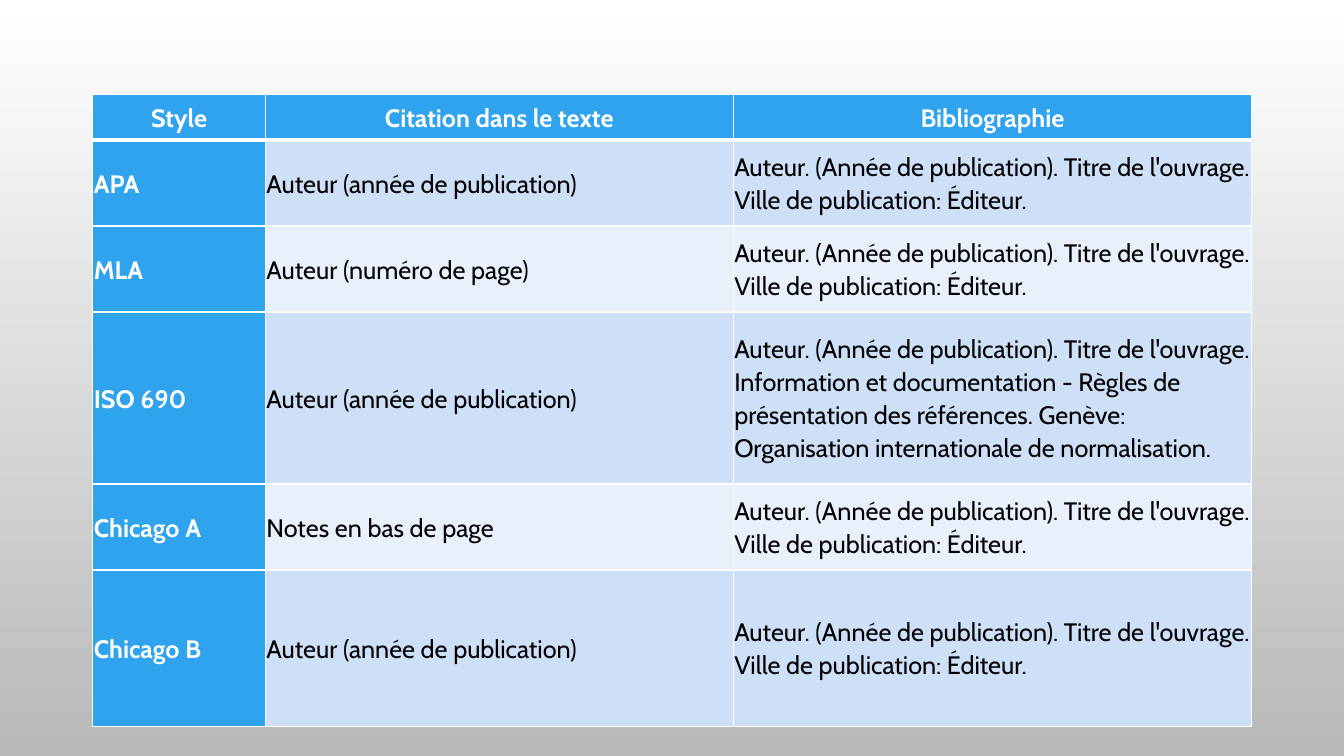
from dataclasses import dataclass

from pptx import Presentation
from pptx.dml.color import RGBColor
from pptx.enum.text import MSO_ANCHOR, PP_ALIGN
from pptx.oxml import parse_xml
from pptx.oxml.ns import nsdecls
from pptx.slide import Slide
from pptx.table import Table, _Cell as Cell
from pptx.util import Pt

COLORS = {
    "white": "FFFFFF",
    "black": "000000",
    "background_end": "B9B9B9",
    "heading": "2FA3EE",
    "odd_band": "CDE0F8",
    "even_band": "E8F0FC",
}
FONT = "Cabin"
COLUMN_WIDTHS = (123.3, 334.2, 370.3)
HEADER_HEIGHT = 32.4
HEADER_RULE = 3
GRID_RULE = 1
CELL_INSET = 0.75

HEADERS = ("Style", "Citation dans le texte", "Bibliographie")
AUTHOR_YEAR = "Auteur (année de publication)"
WORK = "Auteur. (Année de publication). Titre de l'ouvrage. "
BOOK = WORK + "Ville de publication: Éditeur."
STANDARD = WORK + (
    "Information et documentation - Règles de présentation des références. "
    "Genève: Organisation internationale de normalisation."
)


@dataclass(frozen=True)
class CitationStyle:
    name: str
    citation: str
    bibliography: str
    height: float


CITATION_STYLES = (
    CitationStyle("APA", AUTHOR_YEAR, BOOK, 61.4),
    CitationStyle("MLA", "Auteur (numéro de page)", BOOK, 61.4),
    CitationStyle("ISO 690", AUTHOR_YEAR, STANDARD, 122.8),
    CitationStyle("Chicago A", "Notes en bas de page", BOOK, 61.4),
    CitationStyle("Chicago B", AUTHOR_YEAR, BOOK, 112.1),
)


def color(name: str) -> RGBColor:
    return RGBColor.from_string(COLORS[name])


def set_borders(cell: Cell, top: float, bottom: float) -> None:
    """Draw white rules; they must precede the fill in the cell properties."""
    properties = cell._tc.get_or_add_tcPr()
    rules = (("L", GRID_RULE), ("R", GRID_RULE), ("T", top), ("B", bottom))
    for index, (side, width) in enumerate(rules):
        properties.insert(index, parse_xml(
            f'<a:ln{side} {nsdecls("a")} w="{Pt(width)}"><a:solidFill>'
            f'<a:srgbClr val="{COLORS["white"]}"/></a:solidFill></a:ln{side}>'
        ))


def fill_cell(cell: Cell, text: str, row: int, column: int) -> None:
    is_header = row == 0
    is_heading = is_header or column == 0
    band = "odd_band" if row % 2 else "even_band"

    cell.fill.solid()
    cell.fill.fore_color.rgb = color("heading" if is_heading else band)
    cell.vertical_anchor = MSO_ANCHOR.MIDDLE
    cell.margin_left = cell.margin_right = Pt(CELL_INSET)
    cell.margin_top = cell.margin_bottom = Pt(CELL_INSET)
    set_borders(
        cell,
        top=HEADER_RULE if row == 1 else GRID_RULE,
        bottom=HEADER_RULE if is_header else GRID_RULE,
    )

    cell.text = text
    paragraph = cell.text_frame.paragraphs[0]
    paragraph.alignment = PP_ALIGN.CENTER if is_header else PP_ALIGN.LEFT
    paragraph.line_spacing = 1.07
    paragraph.space_after = Pt(8)
    paragraph.font.name = FONT
    paragraph.font.size = Pt(18)
    paragraph.font.bold = is_heading
    paragraph.font.color.rgb = color("white" if is_heading else "black")


def add_style_table(slide: Slide) -> Table:
    rows = [HEADERS] + [
        (style.name, style.citation, style.bibliography) for style in CITATION_STYLES
    ]
    heights = [HEADER_HEIGHT] + [style.height for style in CITATION_STYLES]
    table = slide.shapes.add_table(
        len(rows), len(HEADERS), Pt(66.3), Pt(67.7),
        Pt(sum(COLUMN_WIDTHS)), Pt(sum(heights)),
    ).table
    table.first_col = True
    for column, width in zip(table.columns, COLUMN_WIDTHS):
        column.width = Pt(width)
    for row, height in zip(table.rows, heights):
        row.height = Pt(height)
    for row_index, texts in enumerate(rows):
        for column_index, text in enumerate(texts):
            cell = table.cell(row_index, column_index)
            fill_cell(cell, text, row_index, column_index)
    return table


def set_background(slide: Slide) -> None:
    fill = slide.background.fill
    fill.gradient()
    fill.gradient_angle = 270
    for stop, name in zip(fill.gradient_stops, ("white", "background_end")):
        stop.color.rgb = color(name)


def main() -> None:
    presentation = Presentation()
    presentation.slide_width = Pt(960)
    presentation.slide_height = Pt(540)

    # Blank layout: the slide has no title
    slide = presentation.slides.add_slide(presentation.slide_layouts[6])
    set_background(slide)

    # Comparison of citation styles
    add_style_table(slide)
    presentation.save("out.pptx")


if __name__ == "__main__":
    main()
